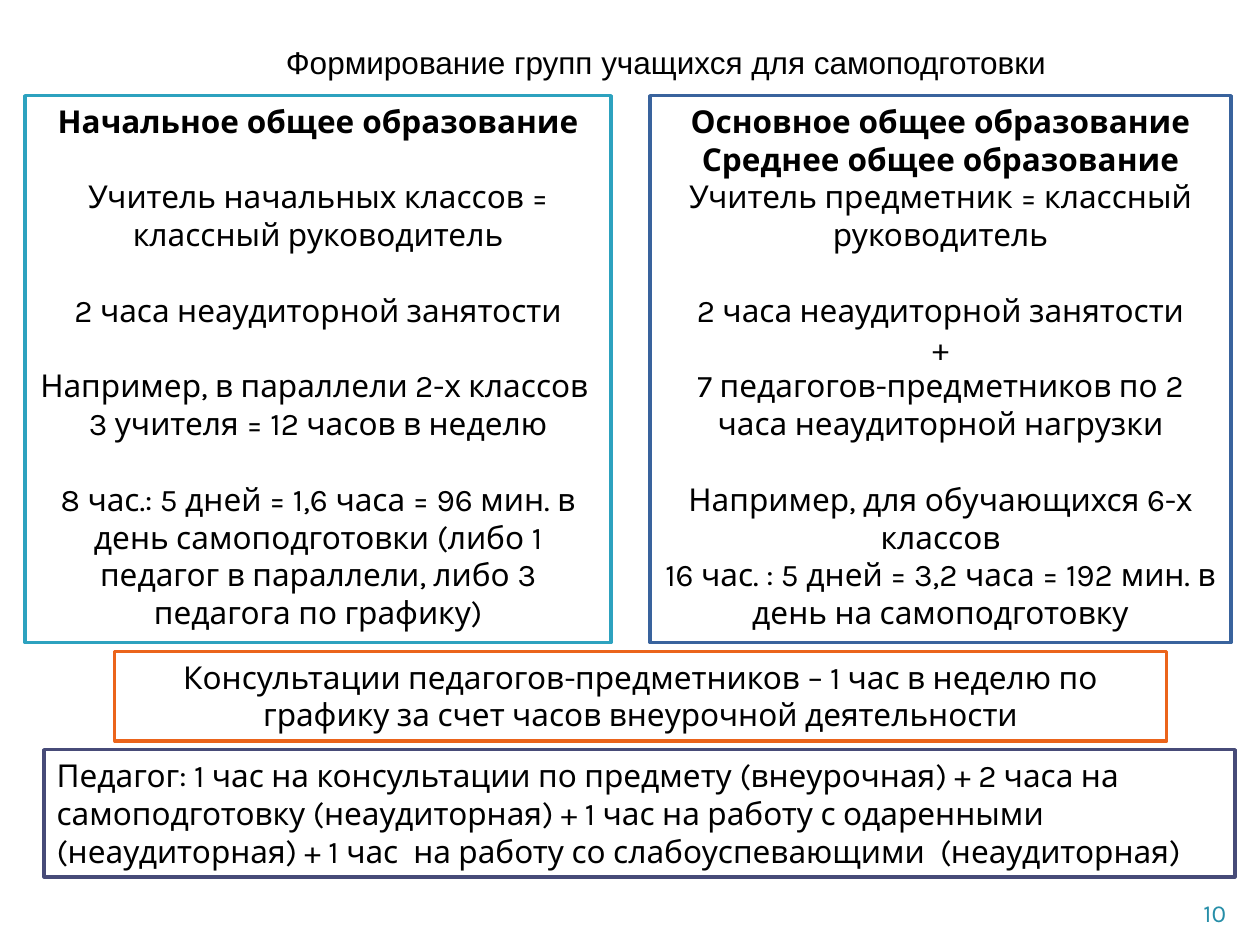
"""Build a slide on forming pupil groups for supervised self-study."""
from pptx import Presentation
from pptx.dml.color import RGBColor
from pptx.enum.shapes import MSO_SHAPE as Shape
from pptx.enum.text import MSO_ANCHOR as Anchor, MSO_AUTO_SIZE as AutoSize, PP_ALIGN as Align
from pptx.util import Inches, Pt

BLACK = RGBColor(0x00, 0x00, 0x00)
WHITE = RGBColor(0xFF, 0xFF, 0xFF)
TEAL = RGBColor(0x2D, 0xA2, 0xBF)
BLUE = RGBColor(0x39, 0x63, 0x9D)
ORANGE = RGBColor(0xEB, 0x64, 0x1B)
INDIGO = RGBColor(0x47, 0x4B, 0x78)
NUMBER_BLUE = RGBColor(0x26, 0x8E, 0xA8)

PANEL_TOP, PANEL_HEIGHT = 0.76, 4.34
BLOCK_GAP = Pt(21.6)

PRIMARY_HEADINGS = ["Начальное общее образование"]
PRIMARY_BLOCKS = [
    ["Учитель начальных классов = классный руководитель"],
    ["2 часа неаудиторной занятости"],
    ["Например, в параллели 2-х классов ", "3 учителя = 12 часов в неделю"],
    ["8 час.: 5 дней = 1,6 часа = 96 мин. в день самоподготовки "
     "(либо 1 педагог в параллели, либо 3 педагога по графику)"],
]
SECONDARY_HEADINGS = ["Основное общее образование", "Среднее общее образование"]
SECONDARY_BLOCKS = [
    ["Учитель предметник = классный руководитель"],
    ["2 часа неаудиторной занятости", "+",
     "7 педагогов-предметников по 2 часа неаудиторной нагрузки"],
    ["Например, для обучающихся 6-х классов",
     "16 час. : 5 дней = 3,2 часа = 192 мин. в день на самоподготовку"],
]
CONSULTATIONS = ("Консультации педагогов-предметников – 1 час в неделю по графику "
                 "за счет часов внеурочной деятельности")
TEACHER_LOAD = ("Педагог: 1 час на консультации по предмету (внеурочная) + 2 часа на "
                "самоподготовку (неаудиторная) + 1 час на работу с одаренными "
                "(неаудиторная) + 1 час  на работу со слабоуспевающими  (неаудиторная)")


class SlideBuilder:
    """Holds the text style and the slide being filled."""

    def __init__(self, slide, font="Karla", size=18):
        self.slide, self.font, self.size = slide, font, size

    def format(self, paragraph, align=Align.LEFT, color=BLACK, font=None, size=None, bold=False):
        """Align a paragraph and style its runs."""
        paragraph.alignment = align
        for run in paragraph.runs:
            run.font.name = font or self.font
            run.font.size = Pt(size or self.size)
            run.font.bold = bold
            run.font.color.rgb = color

    def label(self, text, left, top, width, height, wrap=True, **style):
        """Add a one-line text box."""
        box = self.slide.shapes.add_textbox(*map(Inches, (left, top, width, height)))
        box.text_frame.word_wrap = wrap
        box.text_frame.text = text
        self.format(box.text_frame.paragraphs[0], **style)

    def frame(self, text, left, top, width, height, line_color, align=Align.CENTER):
        """Add a white outlined rectangle with text and return it."""
        shape = self.slide.shapes.add_shape(
            Shape.RECTANGLE, *map(Inches, (left, top, width, height)))
        shape.shadow.inherit = False
        shape.fill.solid()
        shape.fill.fore_color.rgb = WHITE
        shape.line.color.rgb = line_color
        shape.line.width = Pt(2)
        text_frame = shape.text_frame
        text_frame.word_wrap = True
        text_frame.auto_size = AutoSize.SHAPE_TO_FIT_TEXT
        text_frame.vertical_anchor = Anchor.TOP
        text_frame.text = text
        for paragraph in text_frame.paragraphs:
            self.format(paragraph, align)
        return shape

    def panel(self, headings, blocks, left, width, line_color, gap_after_heading):
        """Add a framed column of bold headings and spaced blocks."""
        lines = headings + [line for block in blocks for line in block]
        shape = self.frame("\n".join(lines), left, PANEL_TOP, width, PANEL_HEIGHT, line_color)
        paragraphs = shape.text_frame.paragraphs
        for paragraph in paragraphs[:len(headings)]:
            self.format(paragraph, Align.CENTER, bold=True)
        start = len(headings)
        for index, block in enumerate(blocks):
            if index or gap_after_heading:
                paragraphs[start].space_before = BLOCK_GAP
            start += len(block)


def main():
    """Create the presentation and save it."""
    presentation = Presentation()
    presentation.slide_width, presentation.slide_height = Inches(10), Inches(7.5)
    builder = SlideBuilder(presentation.slides.add_slide(presentation.slide_layouts[6]))

    builder.label("10", 0.51, 7.08, 9.32, 0.27, align=Align.RIGHT, color=NUMBER_BLUE, size=14)
    builder.panel(PRIMARY_HEADINGS, PRIMARY_BLOCKS, 0.2, 4.65, TEAL, gap_after_heading=True)
    builder.label("Формирование групп учащихся для самоподготовки",
                  2.17, 0.29, 6.29, 0.4, wrap=False, font="Arial")
    builder.panel(SECONDARY_HEADINGS, SECONDARY_BLOCKS, 5.16, 4.61, BLUE, gap_after_heading=False)
    builder.frame(CONSULTATIONS, 0.91, 5.17, 8.35, 0.71, ORANGE)
    builder.frame(TEACHER_LOAD, 0.35, 5.95, 9.45, 1.01, INDIGO, Align.LEFT)

    presentation.save("out.pptx")


if __name__ == "__main__":
    main()
